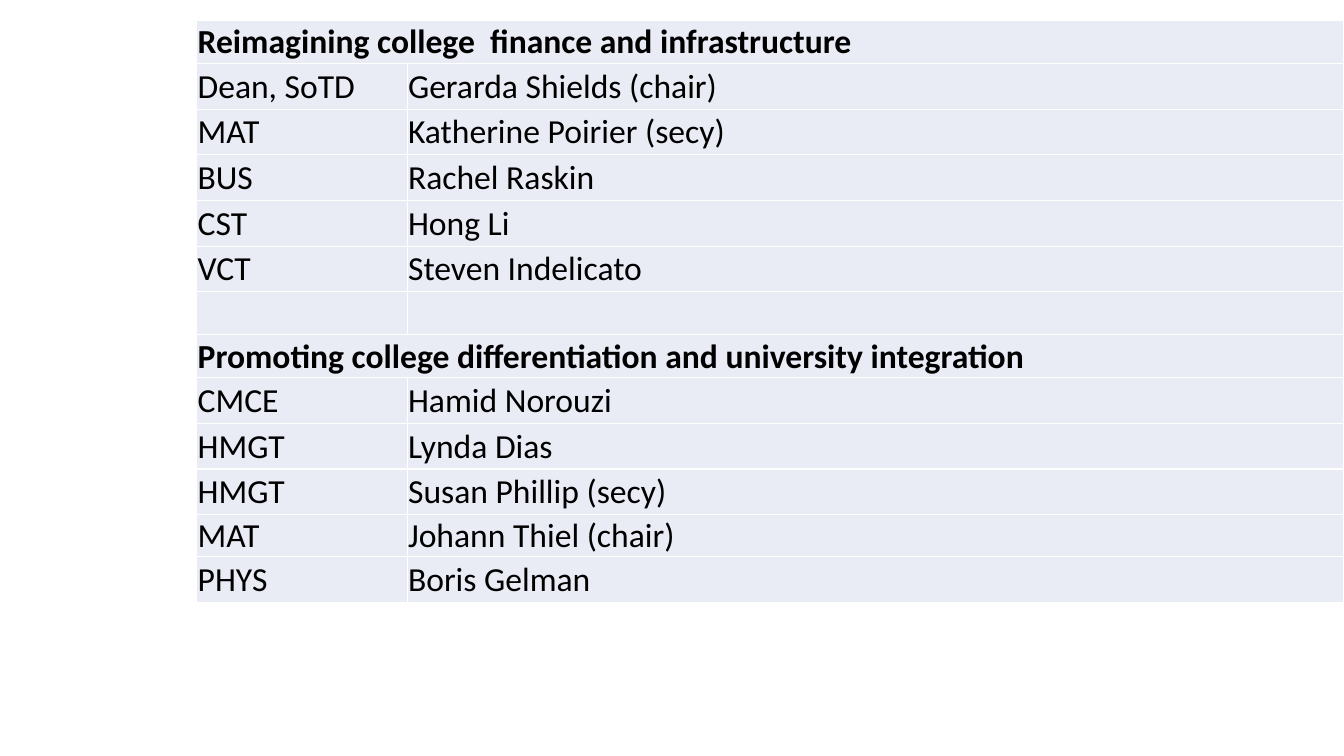
from dataclasses import dataclass

import lxml.etree
import pptx
import pptx.dml.color
import pptx.enum.text
import pptx.oxml.ns
import pptx.util

Pt = pptx.util.Pt


@dataclass(frozen=True)
class Theme:
    font: str = "Calibri"
    size: float = 24
    ink: str = "000000"
    band: str = "E9EBF5"
    rule: str = "FFFFFF"
    rule_width: float = 1
    inset: float = 0.7


THEME = Theme()
DEPARTMENT_WIDTH = 150.3
HEADING_HEIGHT = 30.7
MEMBER_HEIGHT = 32.6
SHORT_HEIGHT = 25.2

COMMITTEES = [
    ("Reimagining college  finance and infrastructure", [
        ("Dean, SoTD", "Gerarda Shields (chair)", MEMBER_HEIGHT),
        ("MAT", "Katherine Poirier (secy)", MEMBER_HEIGHT),
        ("BUS", "Rachel Raskin", MEMBER_HEIGHT),
        ("CST", "Hong Li", MEMBER_HEIGHT),
        ("VCT", "Steven Indelicato", MEMBER_HEIGHT),
    ]),
    ("Promoting college differentiation and university integration", [
        ("CMCE", "Hamid Norouzi", MEMBER_HEIGHT),
        ("HMGT", "Lynda Dias", MEMBER_HEIGHT),
        ("HMGT", "Susan Phillip (secy)", MEMBER_HEIGHT),
        ("MAT", "Johann Thiel (chair)", SHORT_HEIGHT),
        ("PHYS", "Boris Gelman", MEMBER_HEIGHT),
    ]),
]


def roster_rows():
    rows = []
    for heading, members in COMMITTEES:
        if rows:
            rows.append(("", "", HEADING_HEIGHT))
        rows.append((heading, None, HEADING_HEIGHT))
        rows.extend(members)
    return rows


def add_rules(cell):
    properties = cell._tc.get_or_add_tcPr()
    for side in ("lnL", "lnR", "lnT", "lnB"):
        rule = lxml.etree.SubElement(
            properties, pptx.oxml.ns.qn(f"a:{side}"), w=str(Pt(THEME.rule_width)))
        fill = lxml.etree.SubElement(rule, pptx.oxml.ns.qn("a:solidFill"))
        lxml.etree.SubElement(fill, pptx.oxml.ns.qn("a:srgbClr"), val=THEME.rule)


def style_cell(cell):
    cell.margin_left = cell.margin_right = cell.margin_top = Pt(THEME.inset)
    cell.margin_bottom = 0
    cell.vertical_anchor = pptx.enum.text.MSO_ANCHOR.MIDDLE
    add_rules(cell)
    cell.fill.solid()
    cell.fill.fore_color.rgb = pptx.dml.color.RGBColor.from_string(THEME.band)


def write_cell(cell, wording, bold):
    cell.text_frame.text = wording
    for run in cell.text_frame.paragraphs[0].runs:
        run.font.name = THEME.font
        run.font.size = Pt(THEME.size)
        run.font.bold = bold
        run.font.color.rgb = pptx.dml.color.RGBColor.from_string(THEME.ink)


def add_roster(slide, left, top, width):
    rows = roster_rows()
    height = sum(row_height for _, _, row_height in rows)
    roster = slide.shapes.add_table(
        len(rows), 2, Pt(left), Pt(top), Pt(width), Pt(height)).table
    roster.columns[0].width = Pt(DEPARTMENT_WIDTH)
    roster.columns[1].width = Pt(width - DEPARTMENT_WIDTH)
    for index, (department, member, row_height) in enumerate(rows):
        roster.rows[index].height = Pt(row_height)
        first, second = roster.cell(index, 0), roster.cell(index, 1)
        style_cell(first)
        style_cell(second)
        is_heading = member is None
        write_cell(first, department, is_heading)
        if is_heading:
            first.merge(second)
        else:
            write_cell(second, member, False)


def main():
    deck = pptx.Presentation()
    deck.slide_width, deck.slide_height = Pt(960), Pt(540)
    slide = deck.slides.add_slide(deck.slide_layouts[6])
    add_roster(slide, 140.5, 14.7, 819.5)
    deck.save("out.pptx")


if __name__ == "__main__":
    main()
